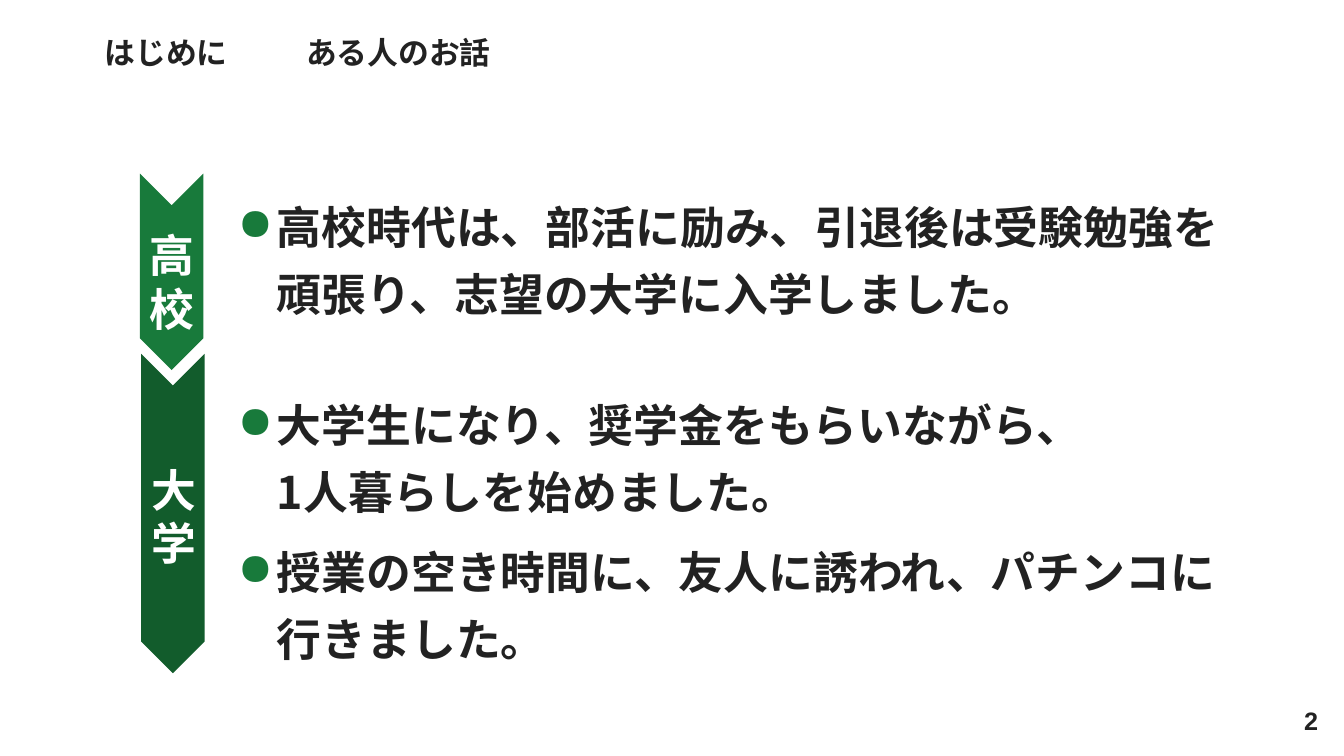
from lxml import etree
from pptx import Presentation
from pptx.dml.color import RGBColor
from pptx.enum.shapes import MSO_SHAPE
from pptx.enum.text import MSO_ANCHOR, PP_ALIGN
from pptx.oxml.ns import qn
from pptx.util import Cm, Pt

CHEVRON = MSO_SHAPE.CHEVRON
MIDDLE = MSO_ANCHOR.MIDDLE
LEFT, CENTER, RIGHT = PP_ALIGN.LEFT, PP_ALIGN.CENTER, PP_ALIGN.RIGHT

INK = RGBColor(0x22, 0x22, 0x22)
WHITE = RGBColor(0xFF, 0xFF, 0xFF)
GREEN = RGBColor(0x18, 0x7A, 0x3B)
DARK_GREEN = RGBColor(0x12, 0x5C, 0x2C)

JAPANESE_FONT = "Noto Sans CJK JP"
LATIN_FONT = "Arial"
BULLET_INDENT = Cm(0.99)

# Text, left, top, width, height in centimetres
HEADINGS = [
    ("はじめに", 2.64, 0.84, 3.48, 0.94),
    ("ある人のお話", 7.72, 0.84, 11, 0.94),
]
STORY = [
    ("高校時代は、部活に励み、引退後は受験勉強を頑張り、志望の大学に入学しました。",
     5.99, 4.7, 24.74, 3.45),
    ("大学生になり、奨学金をもらいながら、1人暮らしを始めました。",
     5.99, 9.68, 21.95, 3.33),
    ("授業の空き時間に、友人に誘われ、パチンコに行きました。",
     5.99, 13.39, 25.35, 3.45),
]


def set_all(target, values):
    for name, value in values.items():
        setattr(target, name, value)


def write(paragraph, text, size, color, font_name=JAPANESE_FONT):
    run = paragraph.add_run()
    run.text = text
    set_all(run.font, {"size": Pt(size), "bold": True, "name": font_name})
    run.font.color.rgb = color
    east_asian = etree.Element(qn("a:ea"), typeface=JAPANESE_FONT)
    run.font._element.find(qn("a:latin")).addnext(east_asian)


def add_text(slide, text, left, top, width, height, size,
             align=LEFT, font_name=JAPANESE_FONT):
    box = slide.shapes.add_textbox(Cm(left), Cm(top), Cm(width), Cm(height))
    set_all(box.text_frame, {
        "word_wrap": True, "margin_left": 0, "margin_right": 0,
        "margin_top": 0, "margin_bottom": 0,
    })
    paragraph = box.text_frame.paragraphs[0]
    paragraph.alignment = align
    write(paragraph, text, size, INK, font_name)
    return box


def add_bullet_text(slide, text, left, top, width, height):
    box = add_text(slide, text, left, top, width, height, 32)
    paragraph = box.text_frame.paragraphs[0]
    paragraph.line_spacing = Pt(48)
    properties = paragraph._p.get_or_add_pPr()
    properties.set("marL", str(BULLET_INDENT))
    properties.set("indent", str(-BULLET_INDENT))
    bullet_color = etree.SubElement(properties, qn("a:buClr"))
    etree.SubElement(bullet_color, qn("a:srgbClr"), val=str(GREEN))
    etree.SubElement(properties, qn("a:buChar"), char="●")


def add_stage(slide, text, left, top, length, color, margin_left=0.25):
    """Chevron turned to point down, with upright text."""
    stage = slide.shapes.add_shape(CHEVRON, Cm(left), Cm(top), Cm(length), Cm(1.6))
    stage.rotation = 90
    stage.shadow.inherit = False
    stage.fill.solid()
    stage.fill.fore_color.rgb = color
    stage.line.fill.background()
    frame = stage.text_frame
    set_all(frame, {
        "word_wrap": True, "vertical_anchor": MIDDLE, "margin_left": Cm(margin_left),
    })
    frame._txBody.bodyPr.set("vert", "vert270")
    paragraph = frame.paragraphs[0]
    paragraph.alignment = CENTER
    write(paragraph, text, 32, WHITE, LATIN_FONT)


def main():
    presentation = Presentation()
    set_all(presentation, {"slide_width": Cm(33.87), "slide_height": Cm(19.05)})
    slide = presentation.slides.add_slide(presentation.slide_layouts[6])

    # Headings and page number
    for heading in HEADINGS:
        add_text(slide, *heading, size=22)
    number = add_text(slide, "2", 32.13, 17.65, 1.09, 1.02, 18, RIGHT, LATIN_FONT)
    number.text_frame.vertical_anchor = MIDDLE

    # School stages
    add_stage(slide, "高校", 1.85, 6.05, 4.95, GREEN, margin_left=0.61)
    add_stage(slide, "大学", 0.33, 12.14, 8.05, DARK_GREEN)

    # Story
    for part in STORY:
        add_bullet_text(slide, *part)

    presentation.save("out.pptx")


if __name__ == "__main__":
    main()
